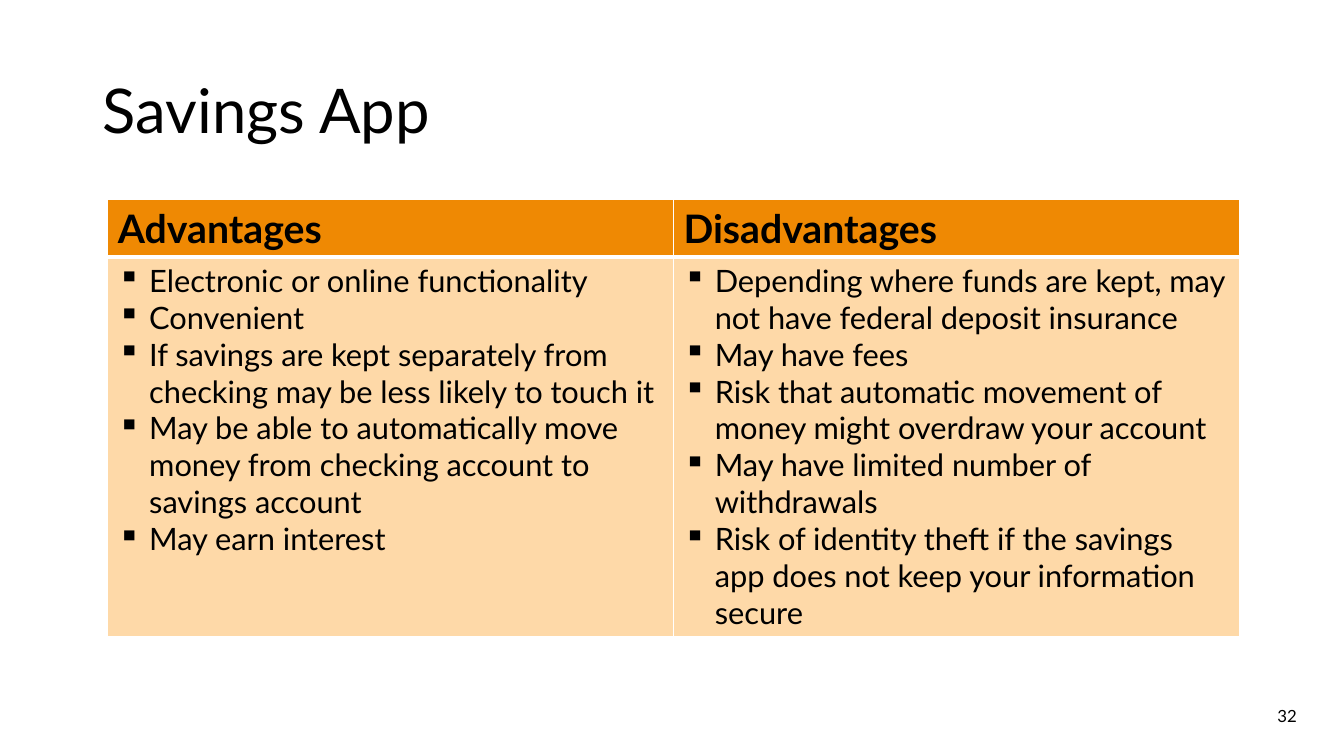
from lxml import etree
from pptx import Presentation
from pptx.dml.color import RGBColor
from pptx.enum.text import MSO_ANCHOR, PP_ALIGN
from pptx.oxml.ns import qn
from pptx.util import Inches, Pt

MIDDLE = MSO_ANCHOR.MIDDLE
LEFT, RIGHT = PP_ALIGN.LEFT, PP_ALIGN.RIGHT
BLACK = RGBColor(0x00, 0x00, 0x00)
WHITE = RGBColor(0xFF, 0xFF, 0xFF)
ORANGE = RGBColor(0xEF, 0x89, 0x03)
PEACH = RGBColor(0xFE, 0xD9, 0xA8)

TITLE = {"size": Pt(44), "bold": False}
HEAD = {"size": Pt(28), "bold": True}
BODY = {"size": Pt(22), "bold": False}
NUMBER = {"size": Pt(12), "bold": False}

COLUMNS = {
    "Advantages": [
        "Electronic or online functionality",
        "Convenient",
        "If savings are kept separately from checking may be less likely to touch it",
        "May be able to automatically move money from checking account to savings account",
        "May earn interest",
    ],
    "Disadvantages": [
        "Depending where funds are kept, may not have federal deposit insurance",
        "May have fees",
        "Risk that automatic movement of money might overdraw your account",
        "May have limited number of withdrawals",
        "Risk of identity theft if the savings app does not keep your information secure",
    ],
}


class Page:
    font = "Lato"
    color = BLACK
    indent = Inches(0.31)

    def __init__(self, slide):
        self.slide = slide

    def style(self, para, form):
        for name, value in {"name": self.font, **form}.items():
            setattr(para.font, name, value)
        para.font.color.rgb = self.color

    def lines(self, frame, lines, form, bullet=False):
        for i, line in enumerate(lines):
            para = frame.add_paragraph() if i else frame.paragraphs[0]
            para.text = line
            if bullet:
                props = para._p.get_or_add_pPr()
                props.set("marL", str(self.indent))
                props.set("indent", str(-self.indent))
                etree.SubElement(props, qn("a:buChar"), char="▪")
            self.style(para, form)

    def text(self, line, place, form, align=LEFT, spacing=1.0):
        frame = self.slide.shapes.add_textbox(*map(Inches, place)).text_frame
        frame.word_wrap = True
        frame.vertical_anchor = MIDDLE
        self.lines(frame, [line], form)
        frame.paragraphs[0].alignment = align
        frame.paragraphs[0].line_spacing = spacing

    def border(self, cell, widths):
        props = cell._tc.get_or_add_tcPr()
        for side, width in widths.items():
            line = etree.SubElement(props, qn(f"a:ln{side}"), w=str(Pt(width)))
            fill = etree.SubElement(line, qn("a:solidFill"))
            etree.SubElement(fill, qn("a:srgbClr"), val=str(WHITE))

    def cell(self, cell, lines, form, fill, widths, bullet=False):
        self.border(cell, widths)
        cell.fill.solid()
        cell.fill.fore_color.rgb = fill
        self.lines(cell.text_frame, lines, form, bullet)

    def table(self, columns, place, heights):
        grid = self.slide.shapes.add_table(
            len(heights), len(columns), *map(Inches, place)).table
        for row, height in zip(grid.rows, heights):
            row.height = Inches(height)
        head = {"L": 1, "R": 1, "T": 1, "B": 3}
        body = {"L": 1, "R": 1, "T": 3, "B": 1}
        for i, (name, items) in enumerate(columns.items()):
            self.cell(grid.cell(0, i), [name], HEAD, ORANGE, head)
            self.cell(grid.cell(1, i), items, BODY, PEACH, body, True)


def main():
    deck = Presentation()
    deck.slide_width = Inches(13.33)
    deck.slide_height = Inches(7.5)
    page = Page(deck.slides.add_slide(deck.slide_layouts[6]))
    page.text("Savings App", (0.92, 0.4, 11.5, 1.45), TITLE, spacing=0.9)
    page.table(COLUMNS, (1.07, 1.98, 11.22, 3.92), (0.56, 3.36))
    page.text("32", (9.42, 6.85, 3.54, 0.5), NUMBER, RIGHT)
    deck.save("out.pptx")


if __name__ == "__main__":
    main()
